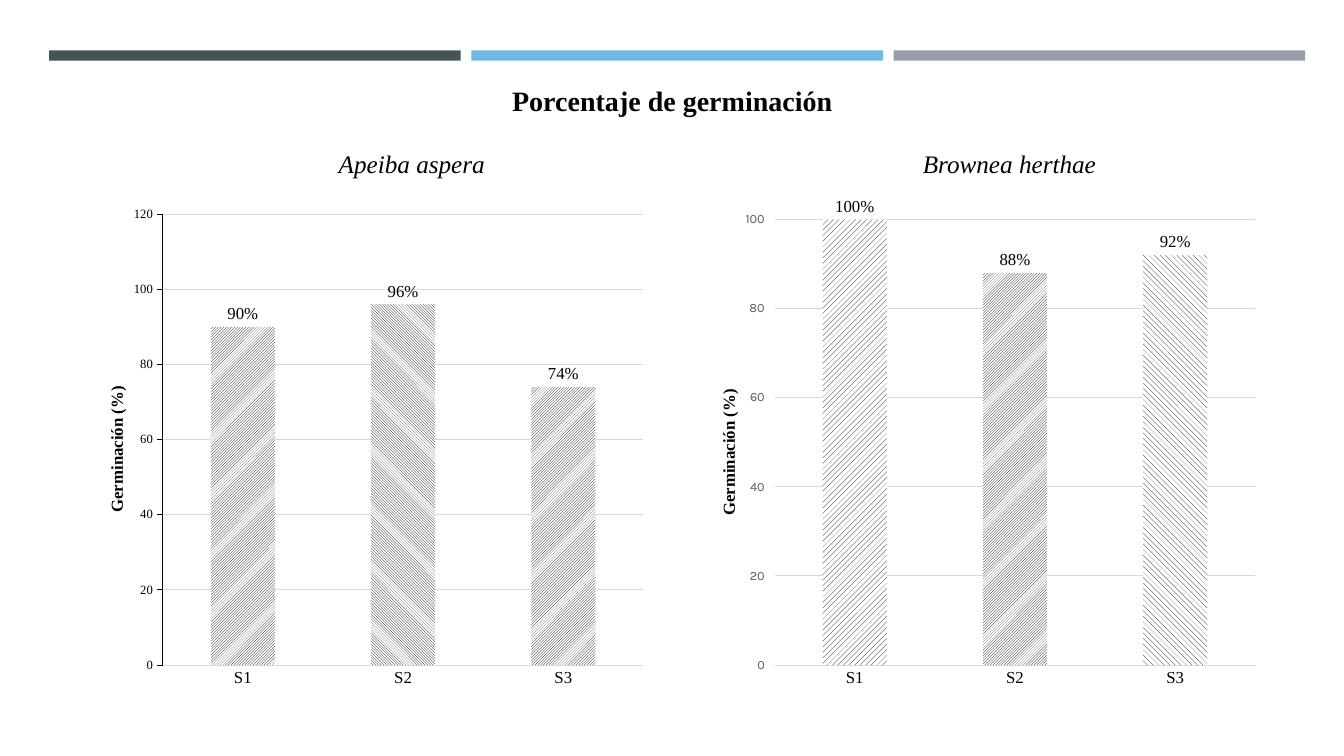
"""Build a slide comparing the germination percentage of two species."""
from lxml import etree
from pptx import Presentation
from pptx import util as u
from pptx.chart.data import CategoryChartData
from pptx.dml.color import RGBColor
from pptx.enum import chart as charts, dml, shapes, text
from pptx.oxml import parse_xml
from pptx.oxml.ns import nsdecls, qn

COLORS = {
    "slate": "465359", "sky": "71B9E4", "silver": "969FA7",
    "black": "000000", "white": "FFFFFF", "grid": "D9D9D9", "muted": "595959",
}
SERIF, SANS = "Times New Roman", "Karla"

TITLE = "Porcentaje de germinación"
AXIS_TITLE = "Germinación (%)"
SEEDLOTS = ["S1", "S2", "S3"]
HEADER_BARS = ["slate", "sky", "silver"]
Pattern = dml.MSO_PATTERN
SPECIES = [
    {
        "name": "Apeiba aspera", "values": [90, 96, 74], "maximum": 120,
        "patterns": [Pattern.DARK_UPWARD_DIAGONAL, Pattern.DARK_DOWNWARD_DIAGONAL,
                     Pattern.LIGHT_UPWARD_DIAGONAL],
        "axis_font": SERIF, "axis_color": "black", "axis_line": True,
        "plot": (0.149, 0.033, 0.831, 0.902), "axis_title_at": (0.046, 0.371),
    },
    {
        "name": "Brownea herthae", "values": [100, 88, 92], "maximum": 100,
        "patterns": [Pattern.WIDE_UPWARD_DIAGONAL, Pattern.LIGHT_UPWARD_DIAGONAL,
                     Pattern.WIDE_DOWNWARD_DIAGONAL],
        "axis_font": SANS, "axis_color": "muted", "axis_line": False,
        "plot": (0.149, 0.043, 0.831, 0.892), "axis_title_at": (0.046, 0.377),
    },
]

BAR_LEFT, BAR_TOP, BAR_WIDTH, BAR_HEIGHT, BAR_PITCH = 1.24, 1.27, 10.37, 0.26, 10.64
CHART_LEFT, CHART_TOP, CHART_WIDTH, CHART_HEIGHT = 1.93, 4.98, 14.58, 12.6
CHART_PITCH = 15.42
NAME_LEFT, NAME_PITCH = 5.82, 15.06


def color(name):
    return RGBColor.from_string(COLORS[name])


def set_font(font, size, name=SERIF, shade="black", bold=False, italic=False):
    font.size, font.name, font.bold, font.italic = u.Pt(size), name, bold, italic
    font.color.rgb = color(shade)


def set_line(line, shade):
    line.color.rgb = color(shade)
    line.width = u.Pt(0.75)


def add_label(slide, box, words, size, **style):
    label = slide.shapes.add_textbox(*map(u.Cm, box))
    frame = label.text_frame
    frame.word_wrap = True
    frame.vertical_anchor = text.MSO_ANCHOR.MIDDLE
    paragraph = frame.paragraphs[0]
    paragraph.text = words
    paragraph.alignment = text.PP_ALIGN.CENTER
    set_font(paragraph.font, size, **style)


def set_layout(parent, index, fractions, inner=False):
    for old in parent.findall(qn("c:layout")):
        parent.remove(old)
    layout = parse_xml(f"<c:layout {nsdecls('c')}><c:manualLayout/></c:layout>")
    settings = [("layoutTarget", "inner")] if inner else []
    settings += [("xMode", "edge"), ("yMode", "edge")]
    settings += zip("xywh", fractions)
    for tag, value in settings:
        etree.SubElement(layout[0], qn(f"c:{tag}")).set("val", str(value))
    parent.insert(index, layout)


def style_axes(chart, species):
    category = chart.category_axis
    category.major_tick_mark = charts.XL_TICK_MARK.NONE
    set_font(category.tick_labels.font, 12)
    set_line(category.format.line, "grid")

    value = chart.value_axis
    value.minimum_scale, value.maximum_scale, value.major_unit = 0, species["maximum"], 20
    set_line(value.major_gridlines.format.line, "grid")
    set_font(value.tick_labels.font, 9, species["axis_font"], species["axis_color"])
    value.major_tick_mark = charts.XL_TICK_MARK.OUTSIDE
    if species["axis_line"]:
        set_line(value.format.line, "black")
    else:
        value.format.line.fill.background()

    paragraph = value.axis_title.text_frame.paragraphs[0]
    paragraph.text = AXIS_TITLE
    set_font(paragraph.font, 12, bold=True)
    title = chart._chartSpace.find(f".//{qn('c:valAx')}/{qn('c:title')}")
    set_layout(title, 1, species["axis_title_at"])


def add_germination_chart(slide, left, species):
    data = CategoryChartData()
    data.categories = SEEDLOTS
    data.add_series("Series 1", species["values"])
    box = (left, CHART_TOP, CHART_WIDTH, CHART_HEIGHT)
    chart = slide.shapes.add_chart(
        charts.XL_CHART_TYPE.COLUMN_CLUSTERED, *map(u.Cm, box), data).chart
    chart.has_title = chart.has_legend = False
    set_font(chart.font, 10, SANS)
    style_axes(chart, species)
    set_layout(chart._chartSpace.find(f".//{qn('c:plotArea')}"), 0, species["plot"], inner=True)

    plot = chart.plots[0]
    plot.gap_width = 150
    plot.vary_by_categories = False
    series = plot.series[0]
    series.format.fill.solid()
    series.format.fill.fore_color.rgb = color("sky")
    for index, pattern in enumerate(species["patterns"]):
        fill = series.points[index].format.fill
        fill.patterned()
        fill.pattern = pattern
        fill.fore_color.rgb, fill.back_color.rgb = color("black"), color("white")

    labels = series.data_labels
    labels.show_value = True
    labels.position = charts.XL_LABEL_POSITION.OUTSIDE_END
    labels.number_format, labels.number_format_is_linked = '0"%"', False
    set_font(labels.font, 12)


def main():
    presentation = Presentation()
    presentation.slide_width, presentation.slide_height = u.Cm(33.87), u.Cm(19.05)
    slide = presentation.slides.add_slide(presentation.slide_layouts[6])

    for index, shade in enumerate(HEADER_BARS):
        box = (BAR_LEFT + index * BAR_PITCH, BAR_TOP, BAR_WIDTH, BAR_HEIGHT)
        shape = slide.shapes.add_shape(shapes.MSO_SHAPE.RECTANGLE, *map(u.Cm, box))
        shape.shadow.inherit = False
        shape.fill.solid()
        shape.fill.fore_color.rgb = color(shade)
        shape.line.fill.background()

    add_label(slide, (1.63, 1.96, 30.63, 1.12), TITLE, 20, bold=True)
    for index, species in enumerate(SPECIES):
        add_germination_chart(slide, CHART_LEFT + index * CHART_PITCH, species)
        name_box = (NAME_LEFT + index * NAME_PITCH, 3.61, 9.12, 1.04)
        add_label(slide, name_box, species["name"], 18, italic=True)

    presentation.save("out.pptx")


if __name__ == "__main__":
    main()
